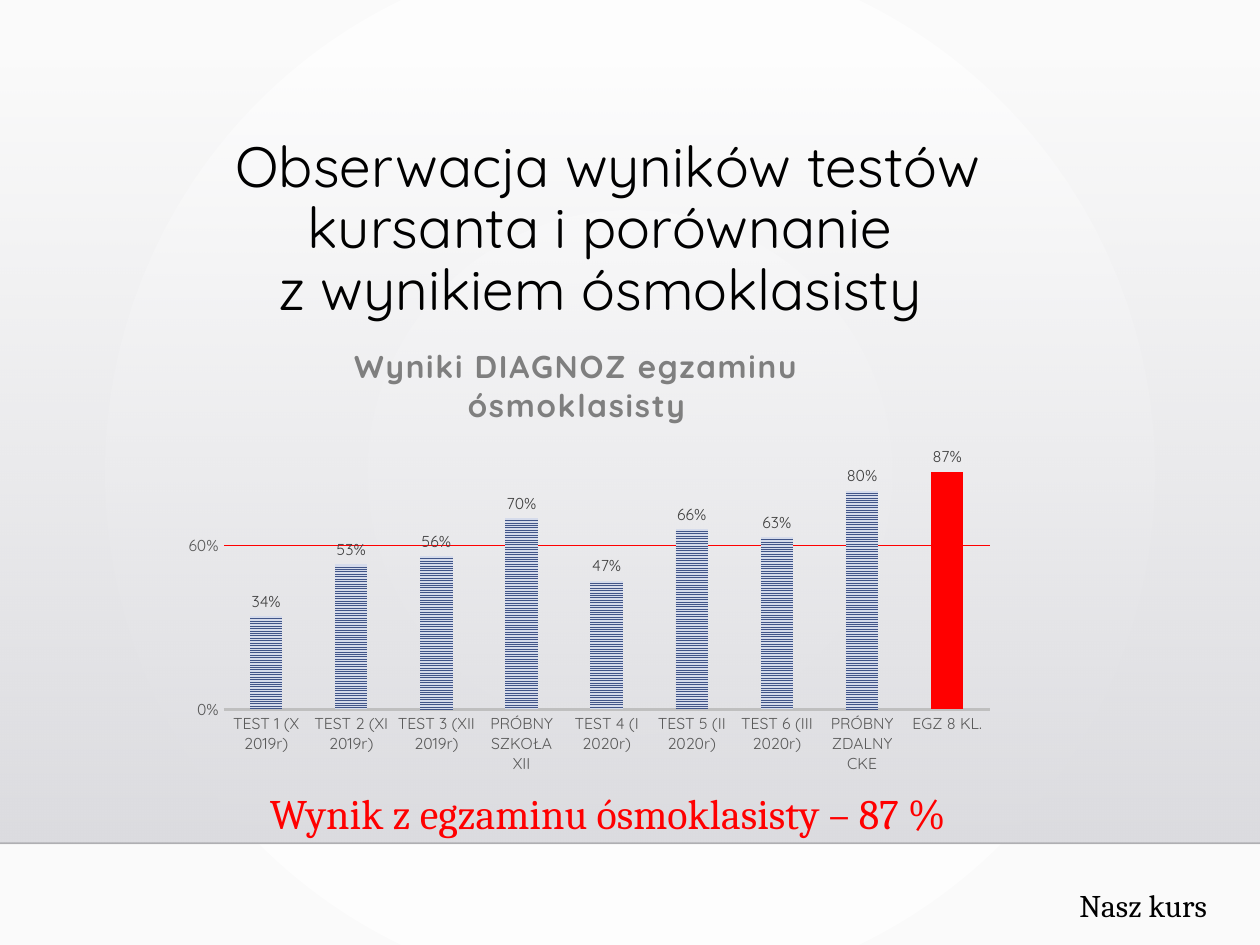
from lxml import etree
from pptx import Presentation
from pptx import util as u
from pptx.chart.data import CategoryChartData
from pptx.dml.color import RGBColor
from pptx.enum import chart as ch, dml, shapes, text
from pptx.oxml.ns import qn

HEADING_FONT = "Quicksand"
BODY_FONT = "Cambria"
RED = "FF0000"
RESULTS = {
    "TEST 1 (X 2019r)": 0.34,
    "TEST 2 (XI 2019r)": 0.53,
    "TEST 3 (XII 2019r)": 0.56,
    "PRÓBNY SZKOŁA XII": 0.70,
    "TEST 4 (I 2020r)": 0.47,
    "TEST 5 (II 2020r)": 0.66,
    "TEST 6 (III 2020r)": 0.63,
    "PRÓBNY ZDALNY CKE": 0.80,
    "EGZ 8 KL.": 0.87,
}


def color(hex_code):
    return RGBColor.from_string(hex_code)


def box(*lengths):
    return [u.Cm(length) for length in lengths]


def style(font, name, size, hex_code, bold=False):
    font.name, font.size, font.bold = name, u.Pt(size), bold
    font.color.rgb = color(hex_code)


def set_alpha(element, percent):
    rgb = next(element.iter(qn("a:srgbClr")))
    etree.SubElement(rgb, qn("a:alpha")).set("val", str(percent * 1000))


def set_gradient(fill, start, end):
    fill.gradient()
    for stop, hex_code in zip(fill.gradient_stops, (start, end)):
        stop.color.rgb = color(hex_code)


def add_background(slide):
    set_gradient(slide.background.fill, "FFFFFF", "FAFAFA")
    gradient = next(slide.element.iter(qn("a:gradFill")))
    gradient.remove(gradient.find(qn("a:lin")))
    circle = etree.SubElement(gradient, qn("a:path"))
    circle.set("path", "circle")
    center = etree.SubElement(circle, qn("a:fillToRect"))
    for side in "ltrb":
        center.set(side, "50000")


def add_shade(slide, width, height):
    shade = slide.shapes.add_shape(shapes.MSO_SHAPE.RECTANGLE, *box(0, 1.3, width, height))
    shade.shadow.inherit = False
    set_gradient(shade.fill, "DCDCE0", "DEDEE2")
    shade.fill.gradient_angle = 270
    set_alpha(shade.element, 0)
    shade.line.fill.background()


def add_rule(slide, width, top):
    rule = slide.shapes.add_connector(shapes.MSO_CONNECTOR.STRAIGHT, *box(0, top, width, top))
    rule.line.color.rgb = color("000001")
    rule.line.width = u.Pt(1)
    set_alpha(rule.element, 20)
    etree.SubElement(rule.element.spPr, qn("a:effectLst"))


def add_text(slide, bounds, words, font_name, size, hex_code, align):
    frame = slide.shapes.add_textbox(*box(*bounds)).text_frame
    frame.word_wrap = True
    paragraph = frame.paragraphs[0]
    paragraph.text = words
    paragraph.alignment = align
    style(paragraph.font, font_name, size, hex_code)
    return paragraph


def set_layout(parent, index, **fractions):
    for old in parent.findall(qn("c:layout")):
        parent.remove(old)
    layout = etree.Element(qn("c:layout"))
    parent.insert(index, layout)
    manual = etree.SubElement(layout, qn("c:manualLayout"))
    if "w" in fractions:
        etree.SubElement(manual, qn("c:layoutTarget")).set("val", "inner")
    for axis in "xy":
        etree.SubElement(manual, qn(f"c:{axis}Mode")).set("val", "edge")
    for key, fraction in fractions.items():
        etree.SubElement(manual, qn(f"c:{key}")).set("val", str(fraction))


def style_axes(chart):
    months, scores = chart.category_axis, chart.value_axis
    for axis in (months, scores):
        axis.major_tick_mark = axis.minor_tick_mark = ch.XL_TICK_MARK.NONE
        style(axis.tick_labels.font, HEADING_FONT, 9, "595959")
    months.format.line.color.rgb = color("BFBFBF")
    months.format.line.width = u.Pt(1.5)
    scores.format.line.fill.background()
    scores.minimum_scale, scores.maximum_scale, scores.major_unit = 0, 1, 0.6
    scores.tick_labels.number_format = "0%"
    scores.tick_labels.number_format_is_linked = False
    threshold = scores.major_gridlines.format.line
    threshold.color.rgb = color(RED)
    threshold.width = u.Pt(0.75)


def style_bars(plot):
    plot.gap_width, plot.overlap, plot.vary_by_categories = 164, -22, False
    bars = plot.series[0]
    stripes = bars.format.fill
    stripes.patterned()
    stripes.pattern = dml.MSO_PATTERN.NARROW_HORIZONTAL
    stripes.fore_color.rgb = color("415588")
    stripes.back_color.rgb = color("D5DBEB")
    exam = bars.points[len(RESULTS) - 1].format.fill
    exam.solid()
    exam.fore_color.rgb = color(RED)
    labels = bars.data_labels
    labels.show_value = True
    labels.position = ch.XL_LABEL_POSITION.OUTSIDE_END
    labels.number_format, labels.number_format_is_linked = "0%", False
    style(labels.font, HEADING_FONT, 9, "404040")


def add_results_chart(slide):
    data = CategoryChartData()
    data.categories = list(RESULTS)
    data.add_series("Series 1", list(RESULTS.values()))
    chart = slide.shapes.add_chart(
        ch.XL_CHART_TYPE.COLUMN_CLUSTERED, *box(3.5, 6.32, 16.79, 9.5), data).chart
    chart.has_legend = False
    style(chart.font, HEADING_FONT, 10, "000000")
    chart.has_title = True
    heading = chart.chart_title.text_frame.paragraphs[0]
    run = heading.add_run()
    run.text = "Wyniki DIAGNOZ egzaminu ósmoklasisty"
    style(run.font, HEADING_FONT, 18, "7F7F7F", bold=True)
    run.font._element.set("spc", "100")
    set_layout(chart.chart_title._element, 1, x=0.21, y=0.05)
    set_layout(next(chart._chartSpace.iter(qn("c:plotArea"))), 0,
               x=0.06, y=0.26, w=0.92, h=0.58)
    style_axes(chart)
    style_bars(chart.plots[0])


def main():
    deck = Presentation()
    deck.slide_width, deck.slide_height = box(25.4, 19.05)
    slide = deck.slides.add_slide(deck.slide_layouts[6])
    add_background(slide)
    add_shade(slide, 25.4, 15.7)
    add_rule(slide, 25.4, 17)
    title = add_text(
        slide, (3.12, 2.67, 18.26, 2.92),
        "Obserwacja wyników testów kursanta i porównanie \vz wynikiem ósmoklasisty ",
        HEADING_FONT, 32.4, "000000", text.PP_ALIGN.CENTER)
    title.line_spacing = 0.9
    add_text(slide, (1.75, 15.75, 21, 1.3), "Wynik z egzaminu ósmoklasisty – 87 %",
             BODY_FONT, 24, RED, text.PP_ALIGN.CENTER)
    add_text(slide, (21.51, 17.73, 9.9, 2.18), "Nasz kurs",
             BODY_FONT, 18, "000000", text.PP_ALIGN.LEFT)
    add_results_chart(slide)
    deck.save("out.pptx")


if __name__ == "__main__":
    main()
